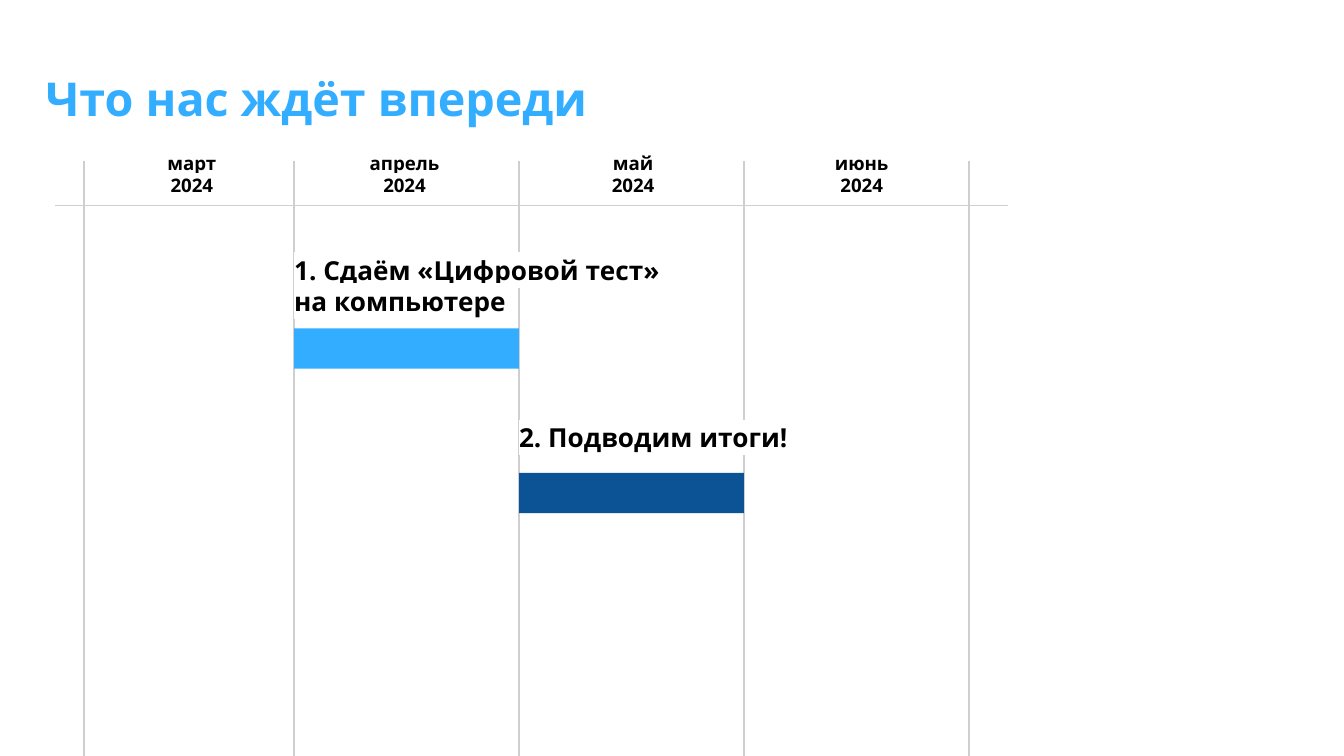
from lxml import etree
from pptx import Presentation, util as u
from pptx.dml.color import RGBColor
from pptx.enum import shapes, text
from pptx.oxml.ns import qn

FONT = "Open Sans"
GRID = "D0CECE"
BLUE = "33ADFF"
NAVY = "0B5394"
MONTH_X, MONTH_W = 5.56, 4.25
GRID_TOP, GRID_BOTTOM = 3.05, 14.78


def color(value):
    """Turn a hex string into a colour."""
    return RGBColor.from_string(value)


def add_run(p, content, size, fill, highlight=None):
    """Add one bold run, optionally highlighted."""
    r = p.add_run()
    r.text = content
    r.font.size, r.font.bold = u.Pt(size), True
    r.font.color.rgb = color(fill)
    if highlight:
        mark = etree.SubElement(r.font._element, qn("a:highlight"))
        etree.SubElement(mark, qn("a:srgbClr"), val=highlight)
    r.font.name = FONT


def set_frame(tf, anchor, right=0, vertical=0):
    """Set the wrapping, anchor and insets of a text frame."""
    tf.word_wrap = True
    tf.auto_size = text.MSO_AUTO_SIZE.NONE
    tf.vertical_anchor = anchor
    tf.margin_left, tf.margin_right = 0, u.Cm(right)
    tf.margin_top = tf.margin_bottom = u.Cm(vertical)


def add_title(s, content):
    """Place and fill the slide title."""
    sp = s.shapes.title
    sp.left, sp.top, sp.width, sp.height = map(u.Cm, (0.86, 1, 22.89, 2.03))
    set_frame(sp.text_frame, text.MSO_ANCHOR.TOP)
    p = sp.text_frame.paragraphs[0]
    p.alignment, p.line_spacing = text.PP_ALIGN.JUSTIFY, 1.3
    add_run(p, content, 25, BLUE)


def add_line(s, x1, y1, x2, y2):
    """Draw a thin grid line."""
    line = s.shapes.add_connector(shapes.MSO_CONNECTOR.STRAIGHT, *map(u.Cm, (x1, y1, x2, y2)))
    line.line.color.rgb = color(GRID)
    line.line.width = u.Pt(0.75)
    etree.SubElement(line._element.spPr, qn("a:effectLst"))


def add_label(s, box, lines, size, align=text.PP_ALIGN.LEFT, anchor=text.MSO_ANCHOR.TOP):
    """Add a highlighted label with one paragraph per line."""
    tf = s.shapes.add_textbox(*map(u.Cm, box)).text_frame
    set_frame(tf, anchor, 0.25, 0.13)
    for i, content in enumerate(lines):
        p = tf.add_paragraph() if i else tf.paragraphs[0]
        p.alignment = align
        add_run(p, content, size, "000000", "FFFFFF")


def add_bar(s, x, y, fill):
    """Draw a bar one month long."""
    sp = s.shapes.add_shape(shapes.MSO_SHAPE.RECTANGLE, *map(u.Cm, (x, y, MONTH_W, 0.76)))
    sp.shadow.inherit = False
    sp.fill.solid()
    sp.fill.fore_color.rgb = color(fill)
    sp.line.fill.background()


def main():
    """Build the timeline slide."""
    prs = Presentation()
    prs.slide_width, prs.slide_height = u.Cm(25.4), u.Cm(14.29)
    s = prs.slides.add_slide(prs.slide_layouts[5])
    add_title(s, "Что нас ждёт впереди")

    borders = [MONTH_X + i * MONTH_W for i in range(4)]
    for x in [1.59] + borders:
        add_line(s, x, GRID_TOP, x, GRID_BOTTOM)
    add_line(s, 1.04, 3.89, 19.05, 3.89)

    months = ("март", 2.66), ("апрель", 6.68), ("май", 11), ("июнь", 15.32)
    for month, x in months:
        add_label(s, (x, 2.73, 2.18, 1.12), (month, "2024"), 10,
                  text.PP_ALIGN.CENTER, text.MSO_ANCHOR.MIDDLE)

    stages = (
        (("1. Сдаём «Цифровой тест»", "на компьютере"), 4.67, 8.51, 6.21, BLUE),
        (("2. Подводим итоги!",), 7.84, 6.96, 8.94, NAVY),
    )
    for x, (lines, top, width, bar_top, fill) in zip(borders, stages):
        add_bar(s, x, bar_top, fill)
        add_label(s, (x, top, width, 1.24), lines, 14)

    prs.save("out.pptx")


if __name__ == "__main__":
    main()
